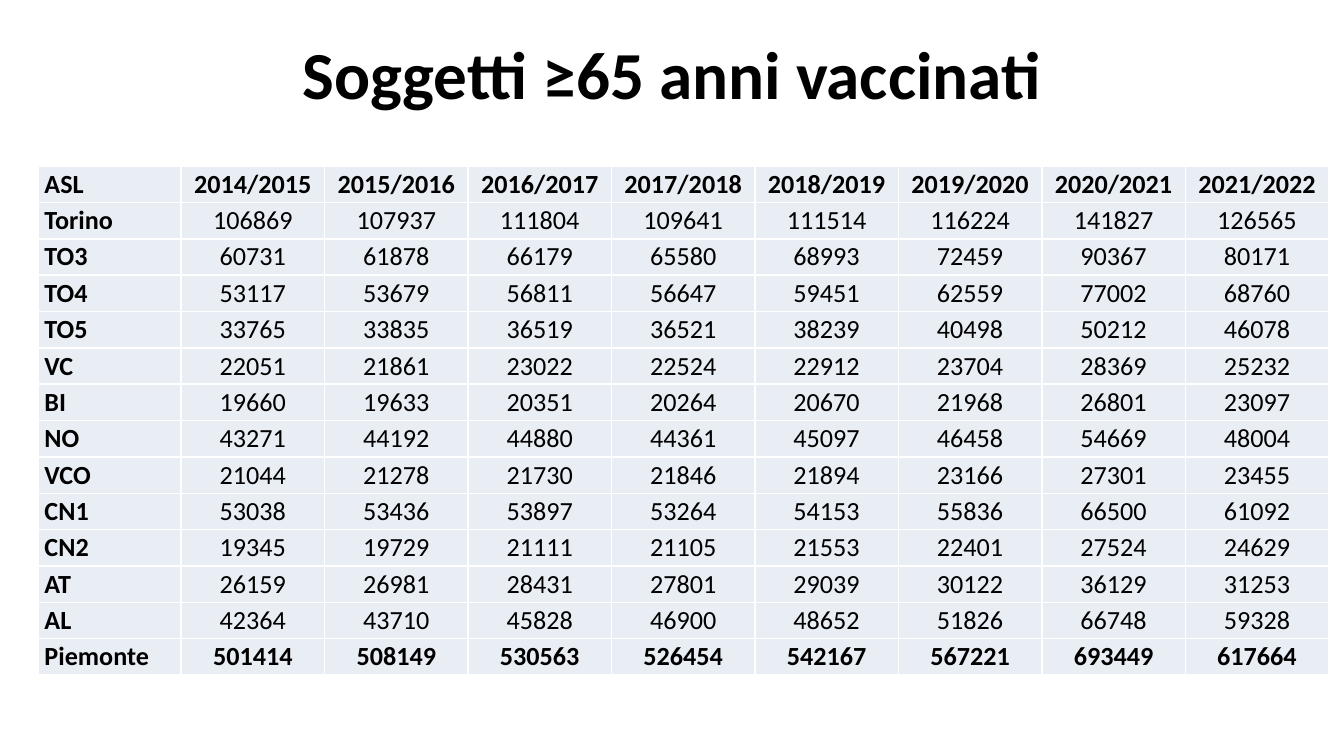
import dataclasses

import lxml.etree
import pptx
import pptx.dml.color
import pptx.enum.text
import pptx.oxml.ns
import pptx.util

Pt = pptx.util.Pt
Align = pptx.enum.text.PP_ALIGN
MIDDLE = pptx.enum.text.MSO_ANCHOR.MIDDLE


@dataclasses.dataclass(frozen=True)
class Theme:
    font: str = "Calibri"
    ink: str = "000000"
    cell_fill: str = "E9EDF4"
    border: str = "FFFFFF"
    title_size: float = 36
    table_size: float = 14
    border_width: float = 1


@dataclasses.dataclass(frozen=True)
class Box:
    left: float
    top: float
    width: float
    height: float

    def lengths(self) -> list:
        return [Pt(value) for value in dataclasses.astuple(self)]


@dataclasses.dataclass(frozen=True)
class TableRow:
    label: str
    values: tuple
    bold: bool = False


THEME = Theme()
TITLE_BOX = Box(36, 16.5, 648, 45)
TABLE_BOX = Box(20.2, 89, 691.65, 272.86)

SEASONS = tuple(f"{year}/{year + 1}" for year in range(2014, 2022))
ROWS = (
    TableRow("ASL", SEASONS, bold=True),
    TableRow("Torino", (106869, 107937, 111804, 109641, 111514, 116224, 141827, 126565)),
    TableRow("TO3", (60731, 61878, 66179, 65580, 68993, 72459, 90367, 80171)),
    TableRow("TO4", (53117, 53679, 56811, 56647, 59451, 62559, 77002, 68760)),
    TableRow("TO5", (33765, 33835, 36519, 36521, 38239, 40498, 50212, 46078)),
    TableRow("VC", (22051, 21861, 23022, 22524, 22912, 23704, 28369, 25232)),
    TableRow("BI", (19660, 19633, 20351, 20264, 20670, 21968, 26801, 23097)),
    TableRow("NO", (43271, 44192, 44880, 44361, 45097, 46458, 54669, 48004)),
    TableRow("VCO", (21044, 21278, 21730, 21846, 21894, 23166, 27301, 23455)),
    TableRow("CN1", (53038, 53436, 53897, 53264, 54153, 55836, 66500, 61092)),
    TableRow("CN2", (19345, 19729, 21111, 21105, 21553, 22401, 27524, 24629)),
    TableRow("AT", (26159, 26981, 28431, 27801, 29039, 30122, 36129, 31253)),
    TableRow("AL", (42364, 43710, 45828, 46900, 48652, 51826, 66748, 59328)),
    TableRow("Piemonte", (501414, 508149, 530563, 526454, 542167, 567221, 693449, 617664), bold=True),
)


def set_attributes(target, values: dict) -> None:
    for name, value in values.items():
        setattr(target, name, value)


def write_text(text_frame, text: str, size: float, bold: bool, alignment) -> None:
    paragraph = text_frame.paragraphs[0]
    paragraph.alignment = alignment
    run = paragraph.add_run()
    run.text = text
    set_attributes(run.font, {"name": THEME.font, "size": Pt(size), "bold": bold})
    run.font.color.rgb = pptx.dml.color.RGBColor.from_string(THEME.ink)


def add_borders(cell) -> None:
    properties = cell._tc.get_or_add_tcPr()
    qualified = pptx.oxml.ns.qn
    for side in ("a:lnL", "a:lnR", "a:lnT", "a:lnB"):
        line = lxml.etree.SubElement(properties, qualified(side), w=str(Pt(THEME.border_width)))
        fill = lxml.etree.SubElement(line, qualified("a:solidFill"))
        lxml.etree.SubElement(fill, qualified("a:srgbClr"), val=THEME.border)


def fill_cell(cell, text: str, bold: bool, alignment) -> None:
    set_attributes(cell, {
        "margin_left": Pt(3.6),
        "margin_right": Pt(3.6),
        "margin_top": Pt(0),
        "margin_bottom": Pt(0),
        "vertical_anchor": MIDDLE,
    })
    add_borders(cell)
    cell.fill.solid()
    cell.fill.fore_color.rgb = pptx.dml.color.RGBColor.from_string(THEME.cell_fill)
    write_text(cell.text_frame, text, THEME.table_size, bold, alignment)


def add_title(slide, text: str, box: Box) -> None:
    shape = slide.shapes.add_textbox(*box.lengths())
    set_attributes(shape.text_frame, {"word_wrap": True, "vertical_anchor": MIDDLE})
    write_text(shape.text_frame, text, THEME.title_size, True, Align.CENTER)


def add_vaccination_table(slide, rows: tuple, box: Box) -> None:
    column_count = len(SEASONS) + 1
    table = slide.shapes.add_table(len(rows), column_count, *box.lengths()).table
    set_attributes(table, {"first_row": False, "horz_banding": False})
    for column in table.columns:
        column.width = Pt(box.width / column_count)
    for row_index, row in enumerate(rows):
        table.rows[row_index].height = Pt(box.height / len(rows))
        fill_cell(table.cell(row_index, 0), row.label, True, Align.LEFT)
        for column_index, value in enumerate(row.values, start=1):
            fill_cell(table.cell(row_index, column_index), str(value), row.bold, Align.CENTER)


def main() -> None:
    presentation = pptx.Presentation()
    set_attributes(presentation, {"slide_width": Pt(720), "slide_height": Pt(405)})
    slide = presentation.slides.add_slide(presentation.slide_layouts[6])
    add_title(slide, "Soggetti ≥65 anni vaccinati", TITLE_BOX)
    add_vaccination_table(slide, ROWS, TABLE_BOX)
    presentation.save("out.pptx")


if __name__ == "__main__":
    main()
